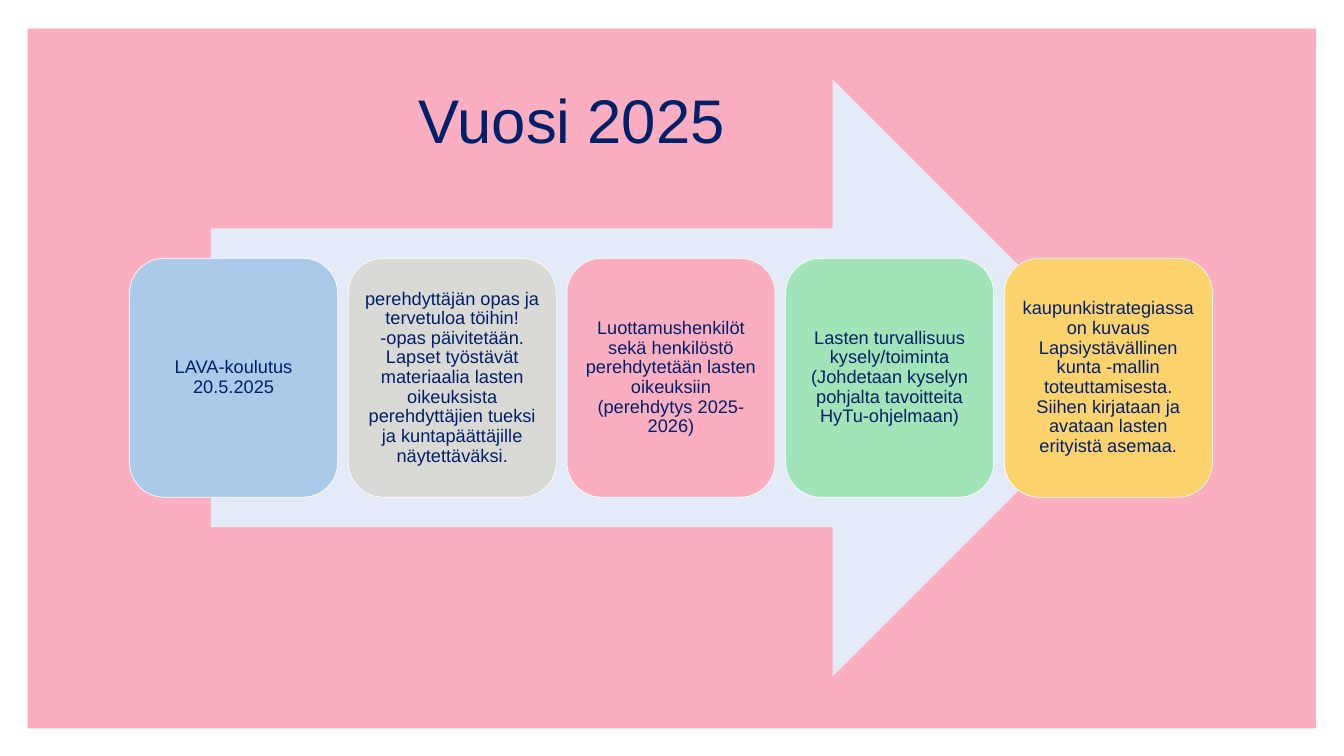
from dataclasses import dataclass

from pptx import Presentation
from pptx.dml.color import RGBColor
from pptx.enum.shapes import MSO_SHAPE as Shape
from pptx.enum.text import MSO_ANCHOR as Anchor, MSO_AUTO_SIZE as AutoSize, PP_ALIGN as Align
from pptx.util import Inches, Pt


@dataclass(frozen=True)
class Theme:
    font: str = "Arial"
    ink: str = "002069"
    panel: str = "FBAEC0"
    arrow: str = "E2EBF7"
    outline: str = "FFFFFF"
    title_size: int = 88
    step_size: int = 26


THEME = Theme()

STEPS = [
    ("ABC9E9", "LAVA-koulutus 20.5.2025"),
    ("D9D9D6", "perehdyttäjän opas ja tervetuloa töihin! -opas päivitetään. "
               "Lapset työstävät materiaalia lasten oikeuksista "
               "perehdyttäjien tueksi ja kuntapäättäjille näytettäväksi."),
    ("FBAEC0", "Luottamushenkilöt sekä henkilöstö perehdytetään lasten "
               "oikeuksiin (perehdytys 2025-2026)"),
    ("A1E4B8", "Lasten turvallisuus kysely/toiminta (Johdetaan kyselyn "
               "pohjalta tavoitteita HyTu-ohjelmaan)"),
    ("FCD26D", "kaupunkistrategiassa on kuvaus Lapsiystävällinen kunta "
               "-mallin toteuttamisesta. Siihen kirjataan ja avataan "
               "lasten erityistä asemaa."),
]


def add_block(slide, kind, box, color):
    block = slide.shapes.add_shape(kind, *(Inches(v) for v in box))
    block.shadow.inherit = False
    block.fill.solid()
    block.fill.fore_color.rgb = RGBColor.from_string(color)
    block.line.fill.background()
    return block


def style_paragraph(paragraph, size, align):
    paragraph.alignment = align
    paragraph.font.name = THEME.font
    paragraph.font.size = Pt(size)
    paragraph.font.color.rgb = RGBColor.from_string(THEME.ink)


def add_title(slide, box, text):
    title = slide.shapes.title
    title.left, title.top, title.width, title.height = (Inches(v) for v in box)
    frame = title.text_frame
    frame.text = text
    frame.word_wrap = True
    frame.auto_size = AutoSize.SHAPE_TO_FIT_TEXT
    frame.vertical_anchor = Anchor.TOP
    style_paragraph(frame.paragraphs[0], THEME.title_size, Align.LEFT)


def add_step(slide, box, color, text):
    step = add_block(slide, Shape.ROUNDED_RECTANGLE, box, color)
    step.line.color.rgb = RGBColor.from_string(THEME.outline)
    step.line.width = Pt(1)
    frame = step.text_frame
    frame.text = text
    frame.word_wrap = True
    frame.vertical_anchor = Anchor.MIDDLE
    frame.margin_left = frame.margin_right = Inches(0.11)
    frame.margin_top = frame.margin_bottom = Inches(0.11)
    paragraph = frame.paragraphs[0]
    paragraph.line_spacing = 0.9
    style_paragraph(paragraph, THEME.step_size, Align.CENTER)


def add_timeline(slide, box, steps, gap=0.21):
    """Arrow over the full height, with a row of equal steps across it."""
    left, top, width, height = box
    # The arrow takes 85 % of the width, centred
    arrow_width = width * 0.85
    arrow_box = (left + (width - arrow_width) / 2, top, arrow_width, height)
    add_block(slide, Shape.RIGHT_ARROW, arrow_box, THEME.arrow)

    # The steps take the middle 40 % of the height
    step_width = (width - gap * (len(steps) - 1)) / len(steps)
    step_top, step_height = top + height * 0.3, height * 0.4
    for i, (color, text) in enumerate(steps):
        step_left = left + i * (step_width + gap)
        add_step(slide, (step_left, step_top, step_width, step_height), color, text)


def main():
    prs = Presentation()
    prs.slide_width, prs.slide_height = Inches(26.66), Inches(15)
    slide = prs.slides.add_slide(prs.slide_layouts[5])

    add_block(slide, Shape.RECTANGLE, (0.55, 0.57, 25.55, 13.88), THEME.panel)
    add_timeline(slide, (2.57, 1.57, 21.48, 11.85), STEPS)
    add_title(slide, (8.21, 1.57, 10.25, 1.58), "Vuosi 2025")
    # Bring the title in front of the panel and the arrow
    slide.shapes.element.append(slide.shapes.title.element)

    prs.save("out.pptx")


if __name__ == "__main__":
    main()
